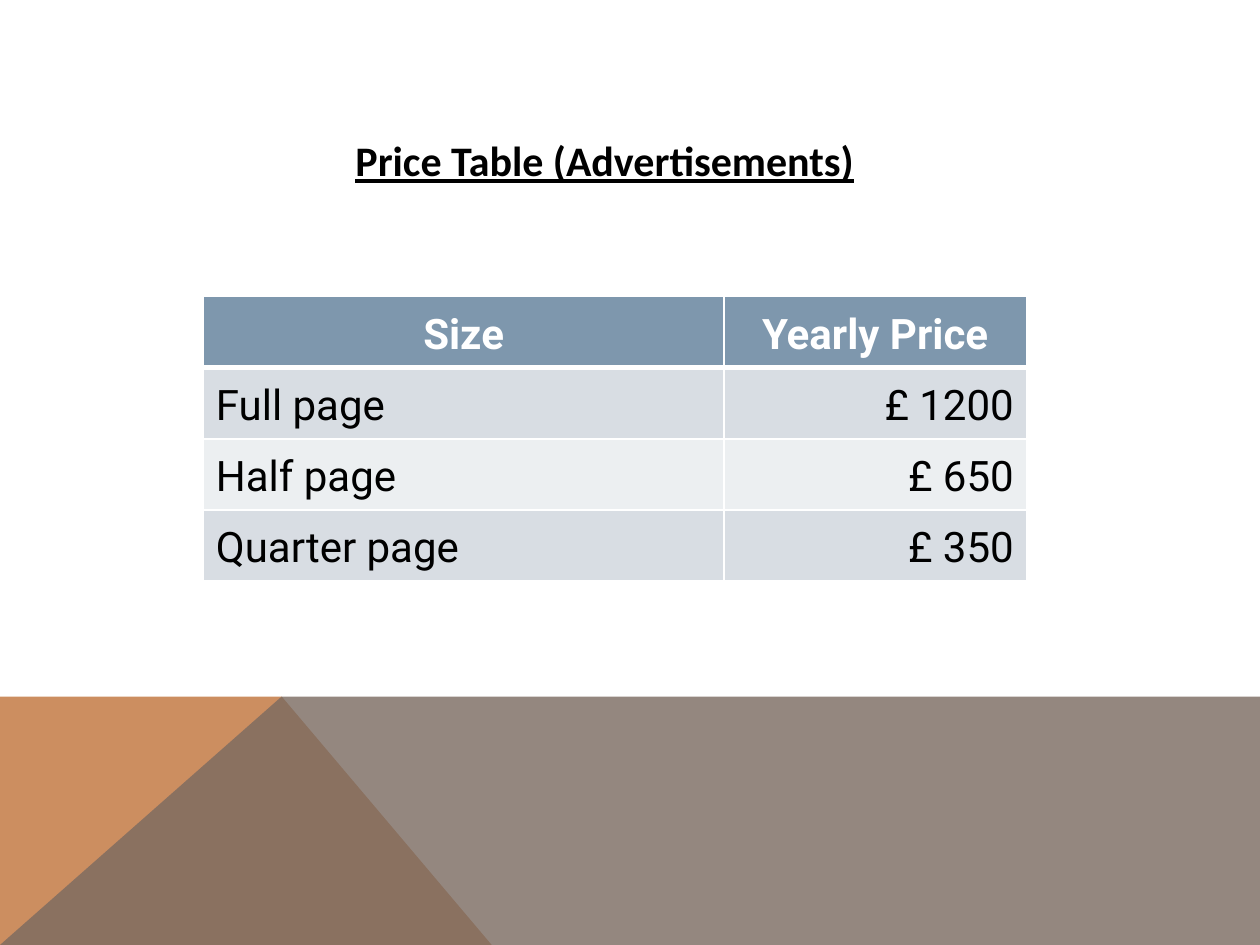
from lxml import etree
from pptx import Presentation
from pptx.dml import color
from pptx.enum import text
from pptx.oxml import ns
from pptx.util import Pt


def rgb(code):
    return color.RGBColor.from_string(code)


def sub(node, tag, **attrs):
    return etree.SubElement(node, ns.qn(tag), **attrs)


class Deck:
    head, odd, even = "7E97AD", "D8DDE3", "ECEFF1"
    white, black = "FFFFFF", "000000"
    face, size = "Roboto", 24

    def __init__(self, wide, high):
        self.prs = Presentation()
        self.prs.slide_width, self.prs.slide_height = Pt(wide), Pt(high)
        self.slide = self.prs.slides.add_slide(self.prs.slide_layouts[5])
        fill = self.slide.background.fill
        fill.solid()
        fill.fore_color.rgb = rgb(self.white)

    def style(self, para, face, code, bold):
        for run in para.runs:
            font = run.font
            font.name, font.size, font.bold = face, Pt(self.size), bold
            font.color.rgb = rgb(code)

    def shape(self, points, code, alpha=100):
        start, *rest = points
        pen = self.slide.shapes.build_freeform(*start, scale=Pt(1))
        pen.add_line_segments(rest, close=True)
        form = pen.convert_to_shape()
        form.shadow.inherit = False
        form.line.fill.background()
        form.fill.solid()
        form.fill.fore_color.rgb = rgb(code)
        if alpha < 100:
            tone = form.fill._xPr.find(".//" + ns.qn("a:srgbClr"))
            sub(tone, "a:alpha", val=str(alpha * 1000))

    def title(self, words, left, top, wide, high):
        box = self.slide.shapes.title
        box.left, box.top, box.width, box.height = map(Pt, (left, top, wide, high))
        frame = box.text_frame
        frame.text = words
        frame.word_wrap = True
        frame.auto_size = text.MSO_AUTO_SIZE.NONE
        frame.vertical_anchor = text.MSO_ANCHOR.TOP
        frame.margin_top = Pt(4.8)
        para = frame.paragraphs[0]
        para.alignment = text.PP_ALIGN.CENTER
        self.style(para, "Calibri", self.black, True)
        para.runs[0].font.underline = True

    def border(self, cell, base):
        props = cell._tc.get_or_add_tcPr()
        widths = {"a:lnL": 1, "a:lnR": 1, "a:lnT": 1, "a:lnB": base}
        for spot, (tag, width) in enumerate(widths.items()):
            line = etree.Element(ns.qn(tag), w=str(Pt(width)))
            sub(sub(line, "a:solidFill"), "a:srgbClr", val=self.white)
            props.insert(spot, line)

    def cell(self, cell, words, row, col):
        first = row == 0
        cell.fill.solid()
        cell.fill.fore_color.rgb = rgb(
            self.head if first else self.odd if row % 2 else self.even)
        cell.text_frame.text = words
        para = cell.text_frame.paragraphs[0]
        para.line_spacing = 1.15
        align = text.PP_ALIGN
        para.alignment = align.CENTER if first else (align.LEFT, align.RIGHT)[col]
        self.style(para, self.face, self.white if first else self.black, first)
        self.border(cell, 3 if first else 1)

    def table(self, rows, left, top, cols, high):
        frame = self.slide.shapes.add_table(
            len(rows), len(cols), Pt(left), Pt(top),
            Pt(sum(cols)), Pt(high * len(rows)))
        grid = frame.table
        for col, wide in zip(grid.columns, cols):
            col.width = Pt(wide)
        for r, row in enumerate(rows):
            grid.rows[r].height = Pt(high)
            for c, words in enumerate(row):
                self.cell(grid.cell(r, c), words, r, c)


def main():
    wide, high, edge, peak = 720, 540, 397.6, 160.6
    deck = Deck(wide, high)
    deck.shape([(0, high), (0, edge), (peak, edge), (281.2, high)], "CC8E60")
    deck.shape([(0, high), (peak, edge), (wide, edge), (wide, high)], "7A6A60", 80)
    deck.table([
        ("Size", "Yearly Price"),
        ("Full page", "£ 1200"),
        ("Half page", "£ 650"),
        ("Quarter page", "£ 350"),
    ], 116.2, 169.4, (297.5, 172.8), 40.7)
    deck.title("Price Table (Advertisements)", 36.7, 72, 617.8, 58.3)
    deck.prs.save("out.pptx")


if __name__ == "__main__":
    main()
